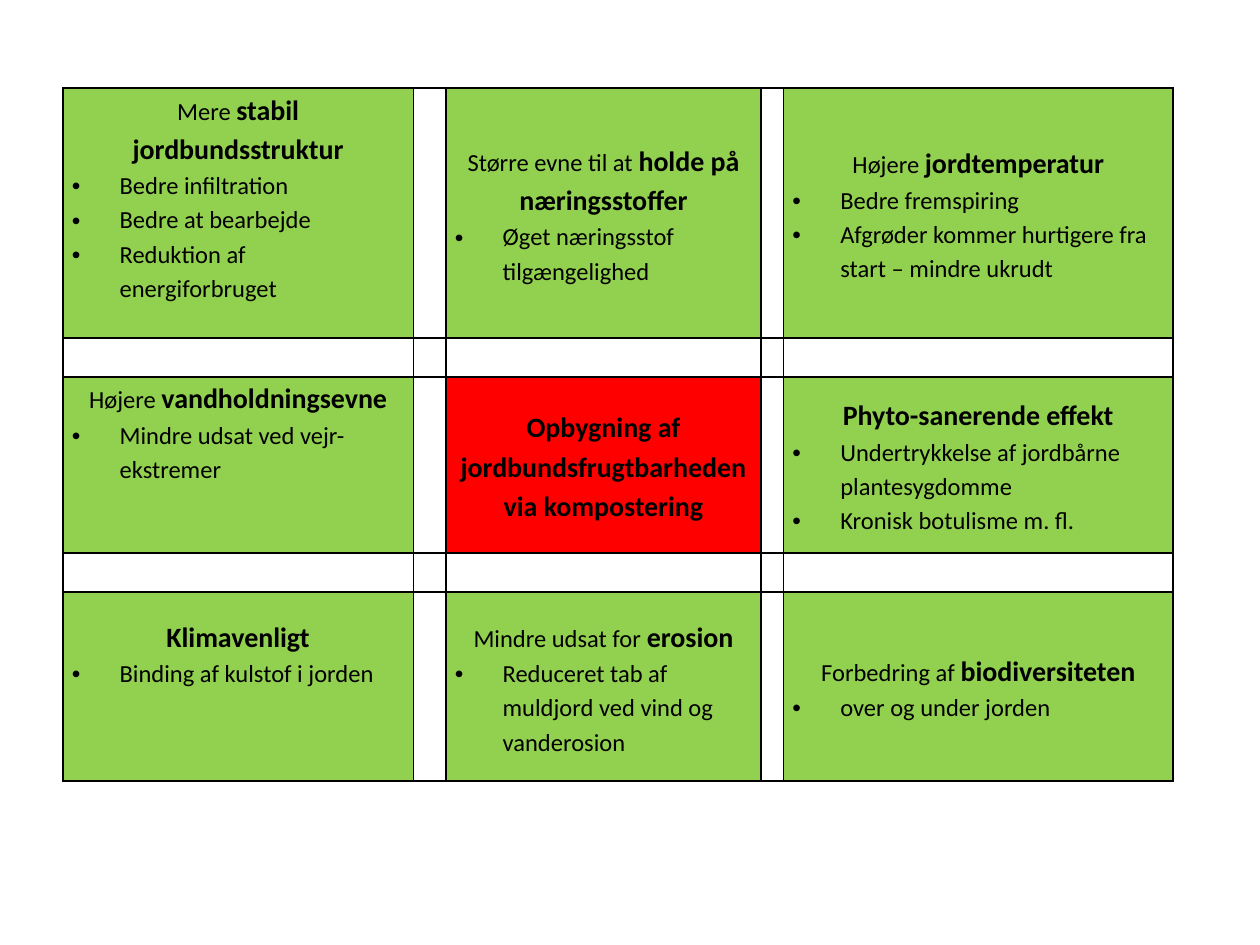
from lxml import etree
from pptx import Presentation
from pptx import util as u
from pptx.dml.color import RGBColor
from pptx.enum import text
from pptx.oxml import ns

COLORS = {"benefit": "92D050", "core": "FF0000", "ink": "000000"}
COLUMNS = [2.78, 0.26, 2.5, 0.18, 3.09]
ROWS = [1.57, 0.31, 1.35, 0.31, 1.5]

# Each cell: plain lead-in, bold heading, bullets, free lines below the text
CELLS = [
    [
        ("Mere ", "stabil jordbundsstruktur",
         ["Bedre infiltration", "Bedre at bearbejde", "Reduktion af energiforbruget"], 1),
        ("Større evne til at ", "holde på næringsstoffer",
         ["Øget næringsstof tilgængelighed"], 0),
        ("Højere ", "jordtemperatur",
         ["Bedre fremspiring", "Afgrøder kommer hurtigere fra start – mindre ukrudt"], 0),
    ],
    [
        ("Højere ", "vandholdningsevne", ["Mindre udsat ved vejr-ekstremer"], 2),
        ("", "Opbygning af jordbundsfrugtbarheden via kompostering", [], 0),
        ("", "Phyto-sanerende effekt",
         ["Undertrykkelse af jordbårne plantesygdomme", "Kronisk botulisme m. fl."], 0),
    ],
    [
        ("", "Klimavenligt", ["Binding af kulstof i jorden"], 2),
        ("Mindre udsat for ", "erosion",
         ["Reduceret tab af muldjord ved vind og vanderosion"], 0),
        ("Forbedring af ", "biodiversiteten", ["over og under jorden"], 0),
    ],
]


class Board:
    font, body, heading = "Calibri", 14, 16
    spacing, indent, free_line = 1.15, 0.38, 0.27

    def __init__(self, slide):
        self.slide = slide

    def table(self, left, top, columns, rows):
        frame = self.slide.shapes.add_table(
            len(rows), len(columns), u.Inches(left), u.Inches(top),
            u.Inches(sum(columns)), u.Inches(sum(rows)))
        table = frame.table
        table.first_row = table.horz_banding = False
        for column, width in zip(table.columns, columns):
            column.width = u.Inches(width)
        for row, height in zip(table.rows, rows):
            row.height = u.Inches(height)
        for cell in table.iter_cells():
            cell.margin_left = cell.margin_right = u.Inches(0.07)
            cell.margin_top = cell.margin_bottom = 0
            cell.vertical_anchor = text.MSO_ANCHOR.MIDDLE
            self.borders(cell)
            cell.fill.background()
        return table

    def borders(self, cell):
        tc_pr = cell._tc.get_or_add_tcPr()
        for side in ("a:lnL", "a:lnR", "a:lnT", "a:lnB"):
            line = etree.SubElement(tc_pr, ns.qn(side), w=str(u.Pt(1)))
            fill = etree.SubElement(line, ns.qn("a:solidFill"))
            etree.SubElement(fill, ns.qn("a:srgbClr"), val=COLORS["ink"])

    def run(self, p, words, size, bold=False):
        r = p.add_run()
        r.text = words
        r.font.name, r.font.size, r.font.bold = self.font, u.Pt(size), bold
        r.font.color.rgb = RGBColor.from_string(COLORS["ink"])

    def bullet(self, p, words):
        p_pr = p._p.get_or_add_pPr()
        p_pr.set("marL", str(u.Inches(self.indent)))
        p_pr.set("indent", str(-u.Inches(self.indent)))
        etree.SubElement(p_pr, ns.qn("a:buFont"), typeface="Arial")
        etree.SubElement(p_pr, ns.qn("a:buChar"), char="•")
        p.line_spacing = self.spacing
        self.run(p, words, self.body)

    def topic(self, cell, color, lead, heading, bullets, free_lines):
        cell.fill.solid()
        cell.fill.fore_color.rgb = RGBColor.from_string(COLORS[color])
        cell.margin_bottom = u.Inches(free_lines * self.free_line)
        tf = cell.text_frame
        p = tf.paragraphs[0]
        p.alignment = text.PP_ALIGN.CENTER
        p.line_spacing = self.spacing
        if lead:
            self.run(p, lead, self.body)
        self.run(p, heading, self.heading, bold=True)
        for words in bullets:
            self.bullet(tf.add_paragraph(), words)


def main():
    prs = Presentation()
    prs.slide_width, prs.slide_height = u.Inches(10), u.Inches(7.5)
    board = Board(prs.slides.add_slide(prs.slide_layouts[6]))
    table = board.table(0.5, 0.7, COLUMNS, ROWS)
    for i, row in enumerate(CELLS):
        for j, topic in enumerate(row):
            color = "core" if i == j == 1 else "benefit"
            board.topic(table.cell(2 * i, 2 * j), color, *topic)
    prs.save("out.pptx")


if __name__ == "__main__":
    main()
